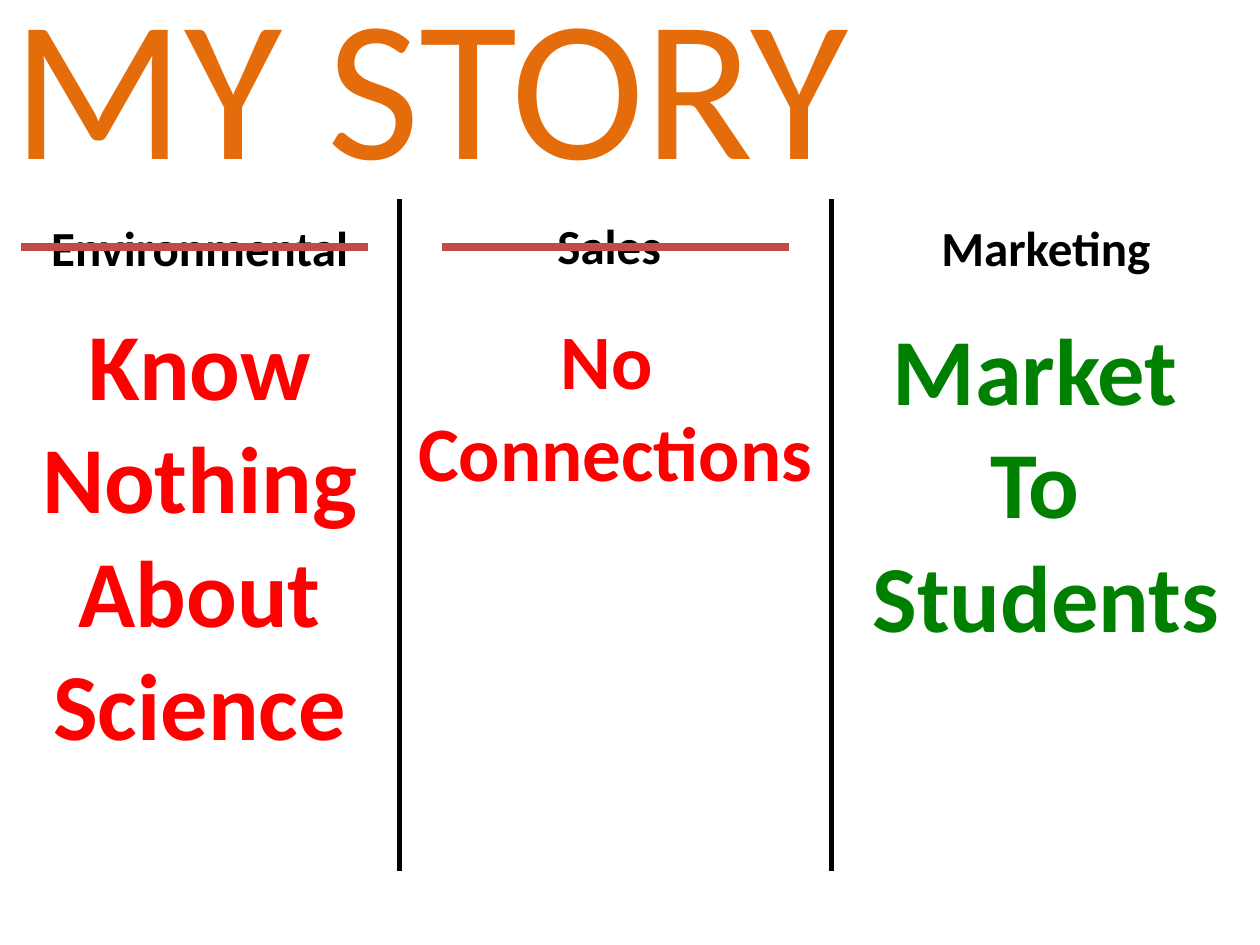
from pptx import Presentation
from pptx.dml.color import RGBColor
from pptx.enum.shapes import MSO_CONNECTOR as Connector
from pptx.enum.text import MSO_ANCHOR as Anchor, MSO_AUTO_SIZE as AutoSize, PP_ALIGN as Align
from pptx.oxml.ns import qn
from pptx.util import Inches, Pt
from lxml.etree import SubElement

ORANGE = RGBColor(0xE4, 0x6C, 0x0A)
BLACK = RGBColor(0, 0, 0)
RED = RGBColor(0xFF, 0, 0)
GREEN = RGBColor(0, 0x80, 0)
BRICK = RGBColor(0xBF, 0x4C, 0x48)

WIDTH, HEIGHT = 10, 7.5
EDGES = [0, 3.17, 6.6, WIDTH]
RULE_TOP, RULE_BOTTOM = 1.58, 6.91
STRIKE_Y, STRIKE_LENGTH = 1.96, 2.75
STRIKE_STARTS = [0.17, 3.51]

HEADINGS = [
    (1.68, 0.57, [[("Environmental", 28)]]),
    (1.61, 0.64, [[("Sales", 28), (" ", 32)]]),
    (1.68, 0.57, [[("Marketing", 28)]]),
]
REASONS = [
    (2.38, 3.74, [[("Know Nothing About Science", 54)]], RED),
    (2.43, 1.58, [[("No ", 44)], [("Connections", 44)]], RED),
    (2.42, 2.83, [[("Market ", 54)], [("To ", 54)], [("Students", 54)]], GREEN),
]


def apply_format(target, values):
    for name, value in values.items():
        setattr(target, name, value)


def add_span(para, text, size, color, bold):
    span = para.add_run()
    span.text = text
    apply_format(span.font, {"name": "Calibri", "size": Pt(size), "bold": bold})
    span.font.color.rgb = color


def set_title(page, text):
    title = page.shapes.title
    place = {"left": 0, "top": 0, "width": Inches(9), "height": Inches(1.25)}
    apply_format(title, place)
    frame = title.text_frame
    apply_format(frame, {"vertical_anchor": Anchor.MIDDLE, "auto_size": AutoSize.NONE})
    para = frame.paragraphs[0]
    para.alignment = Align.LEFT
    add_span(para, text, 115, ORANGE, False)


def add_column_text(page, column, top, height, lines, color):
    left, right = EDGES[column:column + 2]
    box = page.shapes.add_textbox(Inches(left), Inches(top), Inches(right - left), Inches(height))
    frame = box.text_frame
    apply_format(frame, {"word_wrap": True, "auto_size": AutoSize.SHAPE_TO_FIT_TEXT})
    for index, line in enumerate(lines):
        para = frame.add_paragraph() if index else frame.paragraphs[0]
        para.alignment = Align.CENTER
        for text, size in line:
            add_span(para, text, size, color, True)


def add_line(page, start, end, color, weight):
    points = [Inches(value) for value in (*start, *end)]
    line = page.shapes.add_connector(Connector.STRAIGHT, *points)
    line.line.color.rgb = color
    line.line.width = Pt(weight)
    SubElement(line._element.spPr, qn("a:effectLst"))


def main():
    deck = Presentation()
    apply_format(deck, {"slide_width": Inches(WIDTH), "slide_height": Inches(HEIGHT)})
    page = deck.slides.add_slide(deck.slide_layouts[5])
    set_title(page, "MY STORY")
    for column, heading in enumerate(HEADINGS):
        add_column_text(page, column, *heading, BLACK)
    for x in EDGES[1:-1]:
        add_line(page, (x, RULE_TOP), (x, RULE_BOTTOM), BLACK, 3)
    for column, reason in enumerate(REASONS):
        add_column_text(page, column, *reason)
    for x in STRIKE_STARTS:
        add_line(page, (x + STRIKE_LENGTH, STRIKE_Y), (x, STRIKE_Y), BRICK, 4.5)
    deck.save("out.pptx")


if __name__ == "__main__":
    main()
